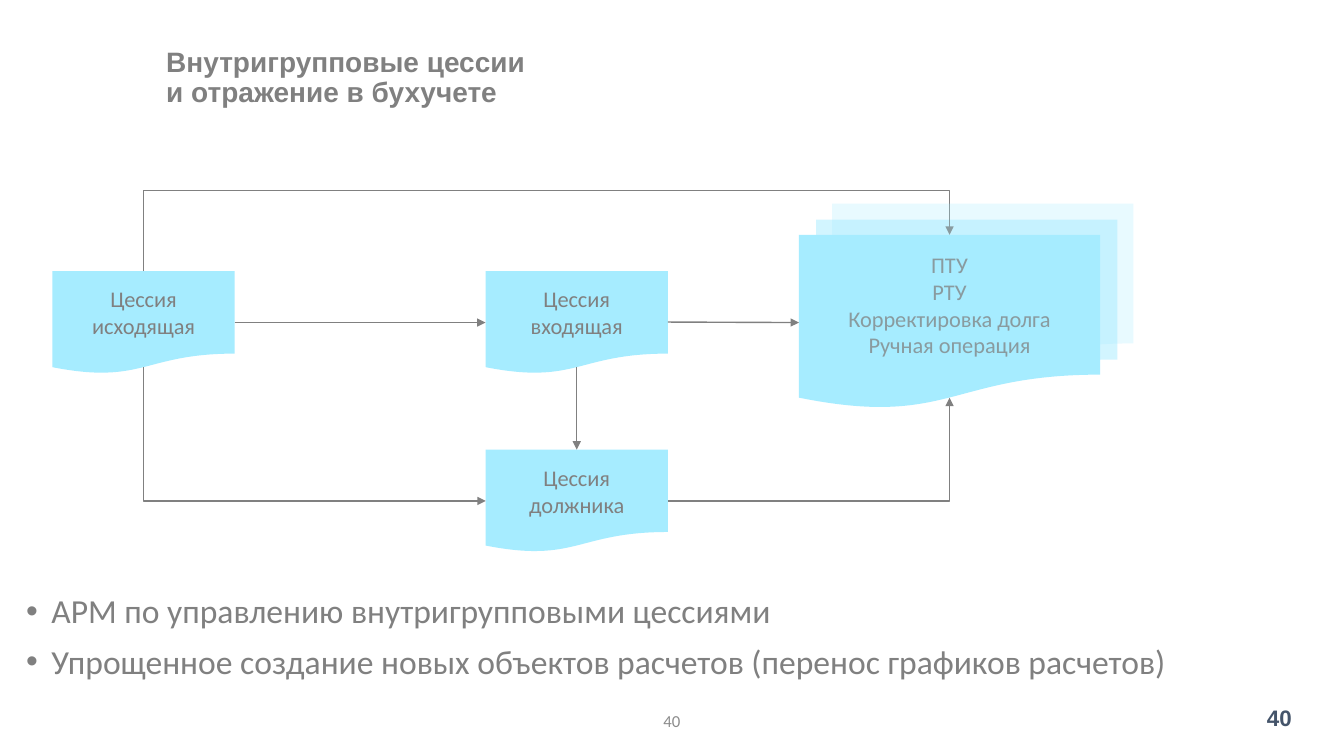
from lxml import etree
from pptx import Presentation
from pptx.dml.color import RGBColor
from pptx.enum.shapes import MSO_CONNECTOR, MSO_SHAPE
from pptx.enum.text import MSO_ANCHOR, MSO_AUTO_SIZE, PP_ALIGN
from pptx.oxml.ns import qn
from pptx.util import Inches, Pt

DOCUMENT = MSO_SHAPE.FLOWCHART_DOCUMENT
STRAIGHT, ELBOW = MSO_CONNECTOR.STRAIGHT, MSO_CONNECTOR.ELBOW
TOP, MIDDLE = MSO_ANCHOR.TOP, MSO_ANCHOR.MIDDLE
LEFT, CENTER, RIGHT = PP_ALIGN.LEFT, PP_ALIGN.CENTER, PP_ALIGN.RIGHT
NO_AUTOFIT = MSO_AUTO_SIZE.NONE

GRAY, SKY = "808080", "A6ECFF"
SMALL, LARGE = (1.81, 1.02), (2.99, 1.73)
SITE_TOP, SITE_LEFT, SITE_BOTTOM, SITE_RIGHT = range(4)
# Fractions of width and height where connectors meet a document shape
SITES = [(0.5, 0), (0, 0.5), (0.5, 0.934), (1, 0.5)]

TITLE_FONT = {"name": "Arial", "size": Pt(20), "bold": True}
BODY_FONT = {"name": "Calibri", "size": Pt(24)}
BOX_FONT = {"name": "Calibri", "size": Pt(16)}
FOOTER_FONT = {"name": "Calibri", "size": Pt(12)}
PAGE_FONT = {"name": "Arial", "size": Pt(16), "bold": True}


def rgb(value):
    return RGBColor.from_string(value)


def child(parent, tag, **attributes):
    return etree.SubElement(parent, qn(tag), attributes)


def place(shape, left, top, width, height):
    bounds = {"left": left, "top": top, "width": width, "height": height}
    for name, value in bounds.items():
        setattr(shape, name, Inches(value))


def write(shape, lines, font, color=GRAY, align=CENTER, anchor=MIDDLE,
          line_spacing=1.0, space_before=0, bullet=None):
    frame = shape.text_frame
    frame.word_wrap = True
    frame.auto_size = NO_AUTOFIT
    frame.vertical_anchor = anchor
    for index, line in enumerate(lines):
        para = frame.add_paragraph() if index else frame.paragraphs[0]
        para.text = line
        para.alignment = align
        para.line_spacing = line_spacing
        para.space_before = Pt(space_before if index else 0)
        if bullet:
            properties = para._p.get_or_add_pPr()
            properties.set("marL", str(Inches(0.25)))
            properties.set("indent", str(Inches(-0.25)))
            child(properties, "a:buFont", typeface="Arial")
            child(properties, "a:buChar", char=bullet)
        for span in para.runs:
            for name, value in font.items():
                setattr(span.font, name, value)
            span.font.color.rgb = rgb(color)


def add_text(page, bounds, text, font, color, align):
    box = page.shapes.add_textbox(*map(Inches, bounds))
    write(box, [text], font, color, align)


def add_document(page, left, top, size, lines=(), opacity=100):
    box = page.shapes.add_shape(DOCUMENT, *map(Inches, (left, top, *size)))
    box.shadow.inherit = False
    box.fill.solid()
    box.fill.fore_color.rgb = rgb(SKY)
    box.line.fill.background()
    if opacity < 100:
        fill_color = box._element.spPr.find(".//" + qn("a:srgbClr"))
        child(fill_color, "a:alpha", val=str(opacity * 1000))
    write(box, lines, BOX_FONT)
    return box


def site_point(box, site):
    across, down = SITES[site]
    return box.left + box.width * across, box.top + box.height * down


def link(page, start, start_site, end, end_site, bend=None, rotation=0,
         flips=(), adjust=None):
    """Join two documents with an arrow; bend names the preset of an elbow."""
    x1, y1 = site_point(start, start_site)
    x2, y2 = site_point(end, end_site)
    arrow = page.shapes.add_connector(ELBOW if bend else STRAIGHT, 0, 0, 0, 0)
    arrow.begin_connect(start, start_site)
    arrow.end_connect(end, end_site)

    width, height = abs(x2 - x1), abs(y2 - y1)
    if rotation % 180:
        width, height = height, width
    arrow.left, arrow.top = int((x1 + x2 - width) / 2), int((y1 + y2 - height) / 2)
    arrow.width, arrow.height = int(width), int(height)
    arrow.rotation = rotation
    properties = arrow._element.spPr
    for name in ("flipH", "flipV"):
        properties.find(qn("a:xfrm")).set(name, "1" if name in flips else "0")
    if bend:
        geometry = properties.find(qn("a:prstGeom"))
        geometry.set("prst", bend)
        if adjust:
            child(geometry.find(qn("a:avLst")), "a:gd", name="adj1", fmla=f"val {adjust}")

    arrow.line.color.rgb = rgb(GRAY)
    arrow.line.width = Pt(1)
    child(properties.find(qn("a:ln")), "a:tailEnd", type="triangle", w="med", len="med")
    child(properties, "a:effectLst")


def add_flow(page):
    add_document(page, 8.1, 2.18, LARGE, opacity=50)
    outgoing = add_document(page, 0.52, 2.69, SMALL, ["Цессия исходящая"])
    incoming = add_document(page, 4.82, 2.69, SMALL, ["Цессия входящая"])
    debtor = add_document(page, 4.82, 4.46, SMALL, ["Цессия должника"])
    entries = add_document(page, 7.93, 2.33, LARGE,
                           ["ПТУ", "РТУ", "Корректировка долга", "Ручная операция"])

    link(page, outgoing, SITE_RIGHT, incoming, SITE_LEFT)
    link(page, incoming, SITE_RIGHT, entries, SITE_LEFT)
    link(page, incoming, SITE_BOTTOM, debtor, SITE_TOP)
    link(page, outgoing, SITE_BOTTOM, debtor, SITE_LEFT,
         "bentConnector2", 270, ["flipH"])
    link(page, debtor, SITE_RIGHT, entries, SITE_BOTTOM,
         "bentConnector2", 0, ["flipV"])
    link(page, outgoing, SITE_TOP, entries, SITE_TOP,
         "bentConnector3", 90, ["flipH", "flipV"], 222700)
    add_document(page, 8.26, 2.02, LARGE, opacity=25)


def main():
    deck = Presentation()
    deck.slide_width, deck.slide_height = Inches(13.34), Inches(7.5)
    page = deck.slides.add_slide(deck.slide_layouts[1])

    title, body = page.placeholders
    place(title, 1.55, 0.05, 10.87, 1.45)
    write(title, ["Внутригрупповые цессии\vи отражение в бухучете"], TITLE_FONT,
          align=LEFT, line_spacing=0.9)
    place(body, 0.16, 5.85, 13.02, 1.37)
    write(body, ["АРМ по управлению внутригрупповыми цессиями",
                 "Упрощенное создание новых объектов расчетов (перенос графиков расчетов)"],
          BODY_FONT, align=LEFT, anchor=TOP, line_spacing=0.9, space_before=10, bullet="•")

    add_flow(page)
    add_text(page, (4.42, 6.95, 4.5, 0.4), "40", FOOTER_FONT, "8C8C8C", CENTER)
    add_text(page, (11.92, 6.92, 1, 0.39), "40", PAGE_FONT, "44546A", RIGHT)
    deck.save("out.pptx")


if __name__ == "__main__":
    main()
